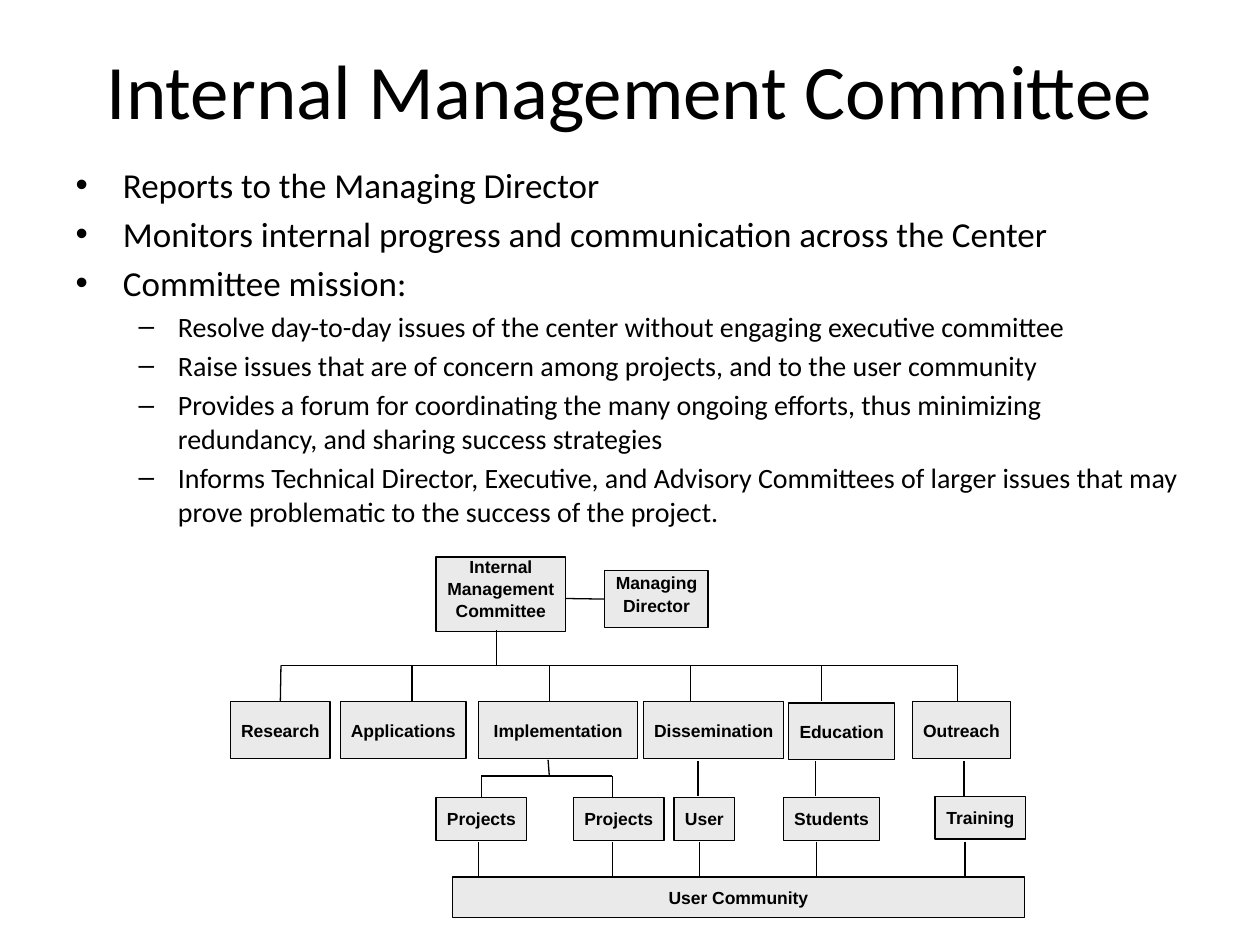
"""Build the committee slide with its list and organisation chart."""
from dataclasses import dataclass
from typing import Optional

from lxml import etree
from pptx import Presentation
from pptx.dml.color import RGBColor
from pptx.enum.shapes import MSO_CONNECTOR, MSO_SHAPE
from pptx.enum.text import MSO_ANCHOR, PP_ALIGN
from pptx.oxml.ns import qn
from pptx.util import Inches, Pt

RECT = MSO_SHAPE.RECTANGLE
LINE = MSO_CONNECTOR.STRAIGHT
MIDDLE = MSO_ANCHOR.MIDDLE
CENTER = PP_ALIGN.CENTER
TOP, LEFT = 0, 1
BLACK, GREY = "000000", "EAEAEA"
TIGHT = {2: 0.25, 3: 0.2}


@dataclass
class Box:
    text: str
    left: float
    top: float
    width: float
    height: float
    wrap: bool = False


@dataclass
class Link:
    x1: float
    y1: float
    x2: float
    y2: float
    target: Optional[int] = None
    side: int = TOP


BULLETS = [
    (0, "Reports to the Managing Director"),
    (0, "Monitors internal progress and communication across the Center"),
    (0, "Committee mission:"),
    (1, "Resolve day-to-day issues of the center without engaging executive committee"),
    (1, "Raise issues that are of concern among projects, and to the user community"),
    (1, "Provides a forum for coordinating the many ongoing efforts, thus minimizing "
        "redundancy, and sharing success strategies"),
    (1, "Informs Technical Director, Executive, and Advisory Committees of larger issues "
        "that may prove problematic to the success of the project."),
]

BOXES = [
    Box("Internal\nManagement\nCommittee", 3.46, 4.42, 1.03, 0.59),
    Box("Managing\nDirector", 4.8, 4.53, 0.82, 0.45),
    Box("Research", 1.83, 5.57, 0.79, 0.45),
    Box("Applications", 2.7, 5.57, 1, 0.45),
    Box("Implementation", 3.8, 5.57, 1.26, 0.45, True),
    Box("Dissemination", 5.11, 5.57, 1.11, 0.45),
    Box("Education", 6.26, 5.58, 0.84, 0.45),
    Box("Outreach", 7.24, 5.57, 0.78, 0.45),
    Box("Projects", 3.46, 6.33, 0.72, 0.34),
    Box("Projects", 4.55, 6.33, 0.72, 0.34),
    Box("User", 5.35, 6.33, 0.48, 0.34),
    Box("Students", 6.22, 6.33, 0.76, 0.34),
    Box("Training", 7.42, 6.32, 0.72, 0.34),
    Box("User Community", 3.59, 6.96, 4.54, 0.32, True),
]
CHIEF, RESEARCH, PROJECT = 1, 2, 8

LINKS = [
    Link(4.49, 4.75, 4.8, 4.75, CHIEF, LEFT),
    Link(3.94, 5, 3.94, 5.28),
    Link(2.23, 5.28, 7.6, 5.28),
    Link(2.23, 5.28, 2.23, 5.57, RESEARCH),
    *(Link(x, 5.28, x, 5.56) for x in (3.27, 4.36, 5.48, 6.52, 7.6)),
    Link(4.35, 6.03, 4.36, 6.16),
    Link(3.82, 6.16, 4.86, 6.16),
    Link(3.82, 6.16, 3.82, 6.33, PROJECT),
    Link(4.86, 6.16, 4.86, 6.33),
    *(Link(x, 6.04, x, 6.32) for x in (5.54, 6.47, 7.65)),
    *(Link(x, 6.68, x, 6.96) for x in (3.8, 4.86, 5.55, 6.48, 7.66)),
]


def paint(color, value: str) -> None:
    color.rgb = RGBColor.from_string(value)


def style(para, font: str, size: float, bold: bool = False) -> None:
    for run in para.runs:
        run.font.name = font
        run.font.size = Pt(size)
        run.font.bold = bold
        paint(run.font.color, BLACK)


def place(shape, left: float, top: float, width: float, height: float) -> None:
    shape.left, shape.top = Inches(left), Inches(top)
    shape.width, shape.height = Inches(width), Inches(height)


def draw_box(slide, box: Box):
    shape = slide.shapes.add_shape(
        RECT, Inches(box.left), Inches(box.top), Inches(box.width), Inches(box.height))
    shape.shadow.inherit = False
    shape.fill.solid()
    paint(shape.fill.fore_color, GREY)
    paint(shape.line.color, BLACK)
    shape.line.width = Pt(0.75)
    frame = shape.text_frame
    frame.text = box.text
    frame.word_wrap = box.wrap
    frame.vertical_anchor = MIDDLE
    for para in frame.paragraphs:
        para.alignment = CENTER
        para.space_after = Pt(10)
        para.line_spacing = TIGHT.get(len(frame.paragraphs))
        style(para, "Arial", 10, True)
    return shape


def draw_link(slide, link: Link, shapes: list) -> None:
    line = slide.shapes.add_connector(
        LINE, Inches(link.x1), Inches(link.y1), Inches(link.x2), Inches(link.y2))
    if link.target is not None:
        line.end_connect(shapes[link.target], link.side)
    paint(line.line.color, BLACK)
    line.line.width = Pt(0.75)
    etree.SubElement(line._element.spPr, qn("a:effectLst"))


def fill_text(slide) -> None:
    title, body = slide.placeholders
    place(title, 0.5, 0.08, 9, 1.25)
    title.text_frame.text = "Internal Management Committee"
    style(title.text_frame.paragraphs[0], "Calibri", 44)
    place(body, 0.5, 1.25, 9, 4.95)
    frame = body.text_frame
    frame.text = "\n".join(text for _, text in BULLETS)
    for para, (level, _) in zip(frame.paragraphs, BULLETS):
        para.level = level
        style(para, "Calibri", 16 if level else 20)


def main() -> None:
    deck = Presentation()
    deck.slide_width, deck.slide_height = Inches(10), Inches(7.5)
    slide = deck.slides.add_slide(deck.slide_layouts[1])
    fill_text(slide)
    shapes = [draw_box(slide, box) for box in BOXES]
    for link in LINKS:
        draw_link(slide, link, shapes)
    deck.save("out.pptx")


if __name__ == "__main__":
    main()
